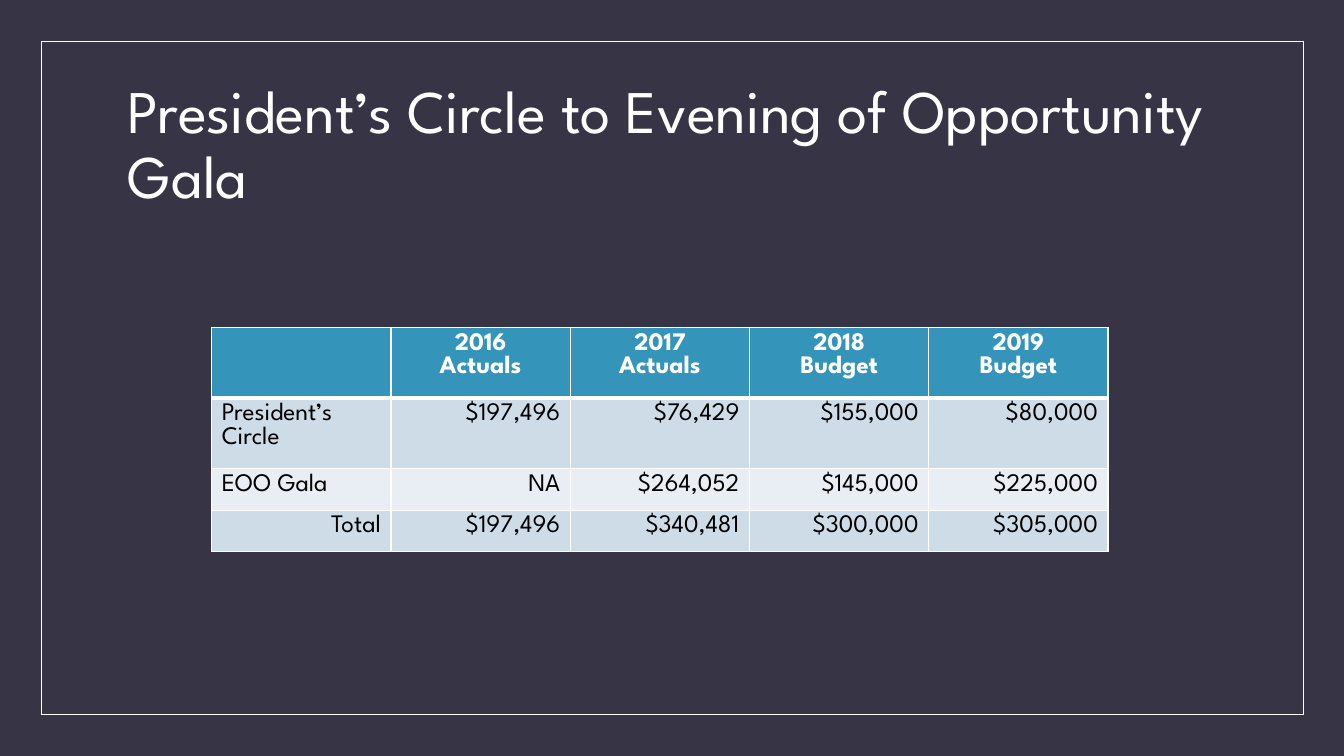
from lxml import etree
from pptx import Presentation
from pptx.dml.color import RGBColor
from pptx.enum.shapes import MSO_SHAPE
from pptx.enum.text import MSO_ANCHOR, PP_ALIGN
from pptx.oxml.ns import qn
from pptx.util import Inches, Pt

RECT = MSO_SHAPE.RECTANGLE
MIDDLE = MSO_ANCHOR.MIDDLE
LEFT, CENTER, RIGHT = PP_ALIGN.LEFT, PP_ALIGN.CENTER, PP_ALIGN.RIGHT

ROWS = [
    ["", "2016\nActuals", "2017\nActuals", "2018\nBudget", "2019\nBudget"],
    ["President’s Circle", "$197,496", "$76,429", "$155,000", "$80,000"],
    ["EOO Gala", "NA", "$264,052", "$145,000", "$225,000"],
    ["Total", "$197,496", "$340,481", "$300,000", "$305,000"],
]
HEIGHTS = [0.56, 0.56, 0.41, 0.41]
FILLS = ["3494BA", "CEDCE7", "E8EEF3", "CEDCE7"]


def color(code):
    return RGBColor.from_string(code)


class Deck:
    """Draws styled elements on the current slide."""

    font = "League Spartan"
    white = "FFFFFF"
    black = "000000"
    back = "373545"

    def __init__(self, deck):
        self.slide = deck.slides.add_slide(deck.slide_layouts[6])
        fill = self.slide.background.fill
        fill.solid()
        fill.fore_color.rgb = color(self.back)

    def frame(self, *box):
        shape = self.slide.shapes.add_shape(RECT, *map(Inches, box))
        shape.shadow.inherit = False
        shape.fill.background()
        shape.line.color.rgb = color(self.white)
        shape.line.width = Pt(0.5)

    def label(self, frame, text, size, ink, align=LEFT, bold=False, space=1.0):
        frame.text = text
        style = {"name": self.font, "size": Pt(size), "bold": bold}
        for para in frame.paragraphs:
            para.alignment = align
            para.line_spacing = space
            for run in para.runs:
                for key, value in style.items():
                    setattr(run.font, key, value)
                run.font.color.rgb = color(ink)

    def title(self, text, *box):
        frame = self.slide.shapes.add_textbox(*map(Inches, box)).text_frame
        frame.word_wrap = True
        frame.vertical_anchor = MIDDLE
        self.label(frame, text, 43.2, self.white, space=0.9)

    def border(self, cell, widths):
        props = cell._tc.get_or_add_tcPr()
        for side, width in widths.items():
            line = etree.SubElement(props, qn("a:ln" + side), w=str(Pt(width)))
            fill = etree.SubElement(line, qn("a:solidFill"))
            etree.SubElement(fill, qn("a:srgbClr"), val=self.white)

    def table(self, rows, heights, fills, left, top, width):
        box = map(Inches, (left, top, width, sum(heights)))
        grid = self.slide.shapes.add_table(len(rows), len(rows[0]), *box).table
        for r, texts in enumerate(rows):
            grid.rows[r].height = Inches(heights[r])
            head = r == 0
            ink = self.white if head else self.black
            widths = {"L": 1, "R": 1, "T": 3 if r == 1 else 1, "B": 3 if head else 1}
            for c, text in enumerate(texts):
                cell = grid.cell(r, c)
                name = c == 0 and text != "Total"
                align = CENTER if head else LEFT if name else RIGHT
                self.label(cell.text_frame, text, 18, ink, align, head)
                self.border(cell, widths)
                cell.fill.solid()
                cell.fill.fore_color.rgb = color(fills[r])


def main():
    deck = Presentation()
    deck.slide_width, deck.slide_height = Inches(13.33), Inches(7.5)
    page = Deck(deck)
    page.frame(0.41, 0.41, 12.52, 6.68)
    page.title("President’s Circle to Evening of Opportunity Gala", 1.17, 0.7, 11, 1.5)
    page.table(ROWS, HEIGHTS, FILLS, 2.1, 3.25, 8.89)
    deck.save("out.pptx")


if __name__ == "__main__":
    main()
